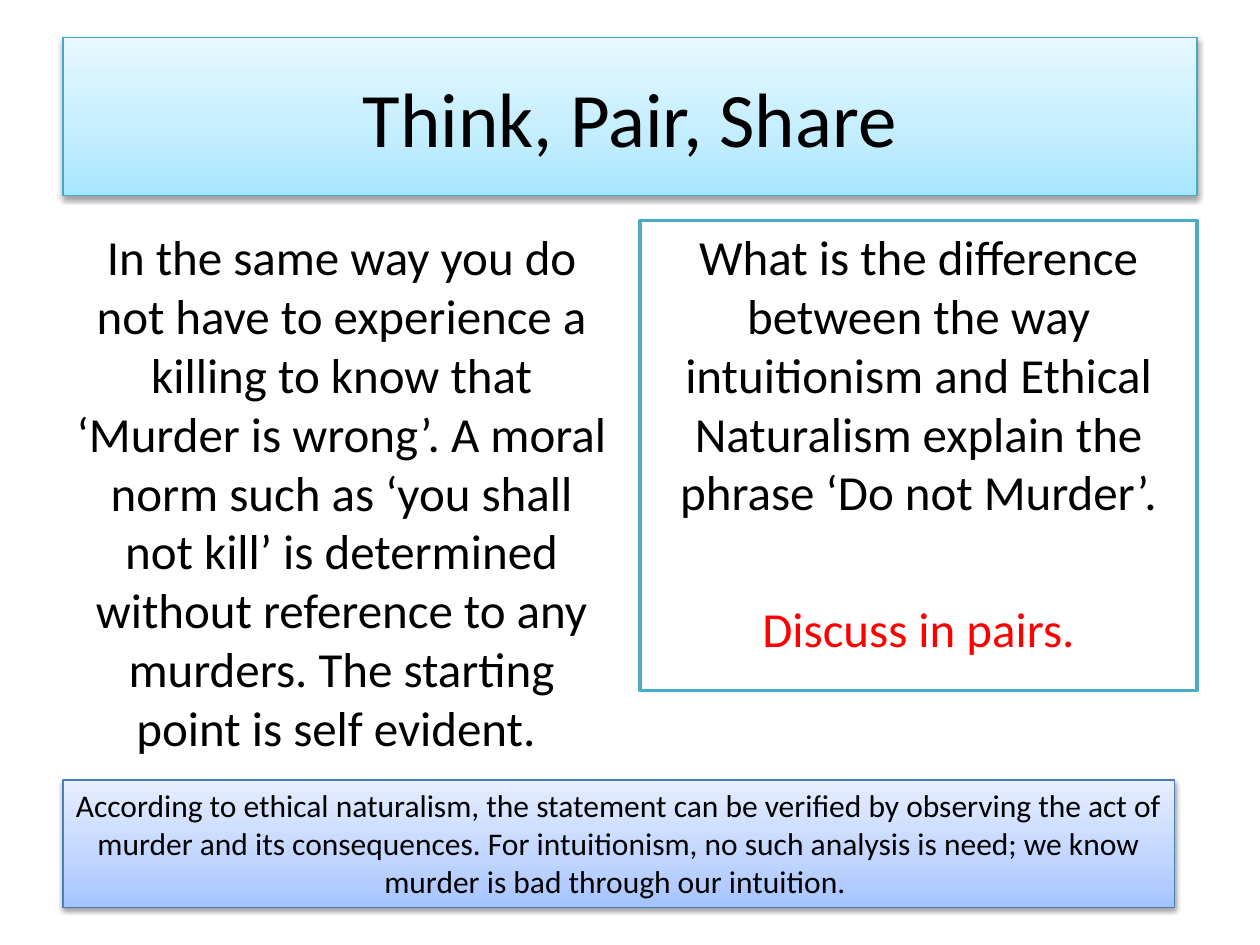
from dataclasses import dataclass

from lxml.etree import SubElement
from pptx import Presentation
from pptx.dml.color import RGBColor
from pptx.enum.shapes import MSO_SHAPE
from pptx.enum.text import MSO_ANCHOR, MSO_AUTO_SIZE, PP_ALIGN
from pptx.oxml.ns import qn
from pptx.util import Inches, Pt


@dataclass(frozen=True)
class Theme:
    font: str = "Calibri"
    ink: str = "000000"
    accent: str = "FF0000"
    paper: str = "FFFFFF"
    frame: str = "4BACC6"
    title_edge: str = "46AAC5"
    answer_edge: str = "4B7EBC"
    title_stops: tuple = ((0, "A7E6FF"), (35, "C1EDFF"), (100, "E7F8FF"))
    answer_stops: tuple = ((0, "A4C4FF"), (35, "BFD4FF"), (100, "E6EEFF"))
    title_size: int = 44
    body_size: int = 28
    answer_size: int = 18


THEME = Theme()
WIDTH, HEIGHT = Inches(10), Inches(7.5)


def region(left, top, width, height):
    return tuple(Inches(length) for length in (left, top, width, height))


def place(shape, box):
    shape.left, shape.top, shape.width, shape.height = box


def write(frame, text, size=THEME.body_size, color=THEME.ink, anchor=MSO_ANCHOR.TOP,
          before=0, follow=False):
    frame.word_wrap = True
    frame.auto_size = MSO_AUTO_SIZE.NONE
    frame.vertical_anchor = anchor
    paragraph = frame.add_paragraph() if follow else frame.paragraphs[0]
    paragraph.alignment = PP_ALIGN.CENTER
    paragraph.space_before = Pt(before)
    run = paragraph.add_run()
    run.text = text
    run.font.name = THEME.font
    run.font.size = Pt(size)
    run.font.color.rgb = RGBColor.from_string(color)


def outline(shape, color, width):
    shape.line.color.rgb = RGBColor.from_string(color)
    shape.line.width = Pt(width)


def add_color(parent, value):
    return SubElement(parent, qn("a:srgbClr"), val=value)


def raise_panel(shape, stops, edge):
    shape.fill.gradient()
    shape.fill.gradient_angle = 90
    outline(shape, edge, 0.75)
    stop_list = shape.element.spPr.find(".//" + qn("a:gsLst"))
    for stop in list(stop_list):
        stop_list.remove(stop)
    for share, color in stops:
        add_color(SubElement(stop_list, qn("a:gs"), pos=str(share * 1000)), color)
    shape.shadow.inherit = False
    effects = shape.element.spPr.find(qn("a:effectLst"))
    shadow = SubElement(effects, qn("a:outerShdw"), blurRad=str(Pt(3.1)),
                        dist=str(Pt(1.6)), dir="5400000", rotWithShape="0")
    SubElement(add_color(shadow, "000000"), qn("a:alpha"), val="38000")


def heading(slide, box):
    title = slide.shapes.title
    place(title, box)
    raise_panel(title, THEME.title_stops, THEME.title_edge)
    write(title.text_frame, "Think, Pair, Share", size=THEME.title_size,
          anchor=MSO_ANCHOR.MIDDLE)


def statement(slide, box):
    passage = slide.shapes.add_textbox(*box)
    write(passage.text_frame,
          "In the same way you do not have to experience a killing to know that "
          "‘Murder is wrong’. A moral norm such as ‘you shall not kill’ is determined "
          "without reference to any murders. The starting point is self evident. ")


def question(slide, box):
    prompt = slide.shapes.add_textbox(*box)
    prompt.fill.solid()
    prompt.fill.fore_color.rgb = RGBColor.from_string(THEME.paper)
    outline(prompt, THEME.frame, 2)
    write(prompt.text_frame,
          "What is the difference between the way intuitionism and Ethical Naturalism "
          "explain the phrase ‘Do not Murder’.")
    write(prompt.text_frame, "Discuss in pairs.", color=THEME.accent, before=44.5,
          follow=True)


def answer(slide, box):
    panel = slide.shapes.add_shape(MSO_SHAPE.RECTANGLE, *box)
    raise_panel(panel, THEME.answer_stops, THEME.answer_edge)
    write(panel.text_frame,
          "According to ethical naturalism, the statement can be verified by observing "
          "the act of murder and its consequences. For intuitionism, no such analysis "
          "is need; we know murder is bad through our intuition. ",
          size=THEME.answer_size)


def main():
    deck = Presentation()
    deck.slide_width, deck.slide_height = WIDTH, HEIGHT
    slide = deck.slides.add_slide(deck.slide_layouts[5])
    margin, content_top, column, gutter = 0.5, 1.75, 4.42, 0.16
    heading(slide, region(margin, 0.3, 2 * column + gutter, 1.25))
    statement(slide, region(margin, content_top, column, 4.95))
    question(slide, region(margin + column + gutter, content_top, column, 3.73))
    answer(slide, region(margin, 6.19, 8.82, 1.01))
    deck.save("out.pptx")


if __name__ == "__main__":
    main()
